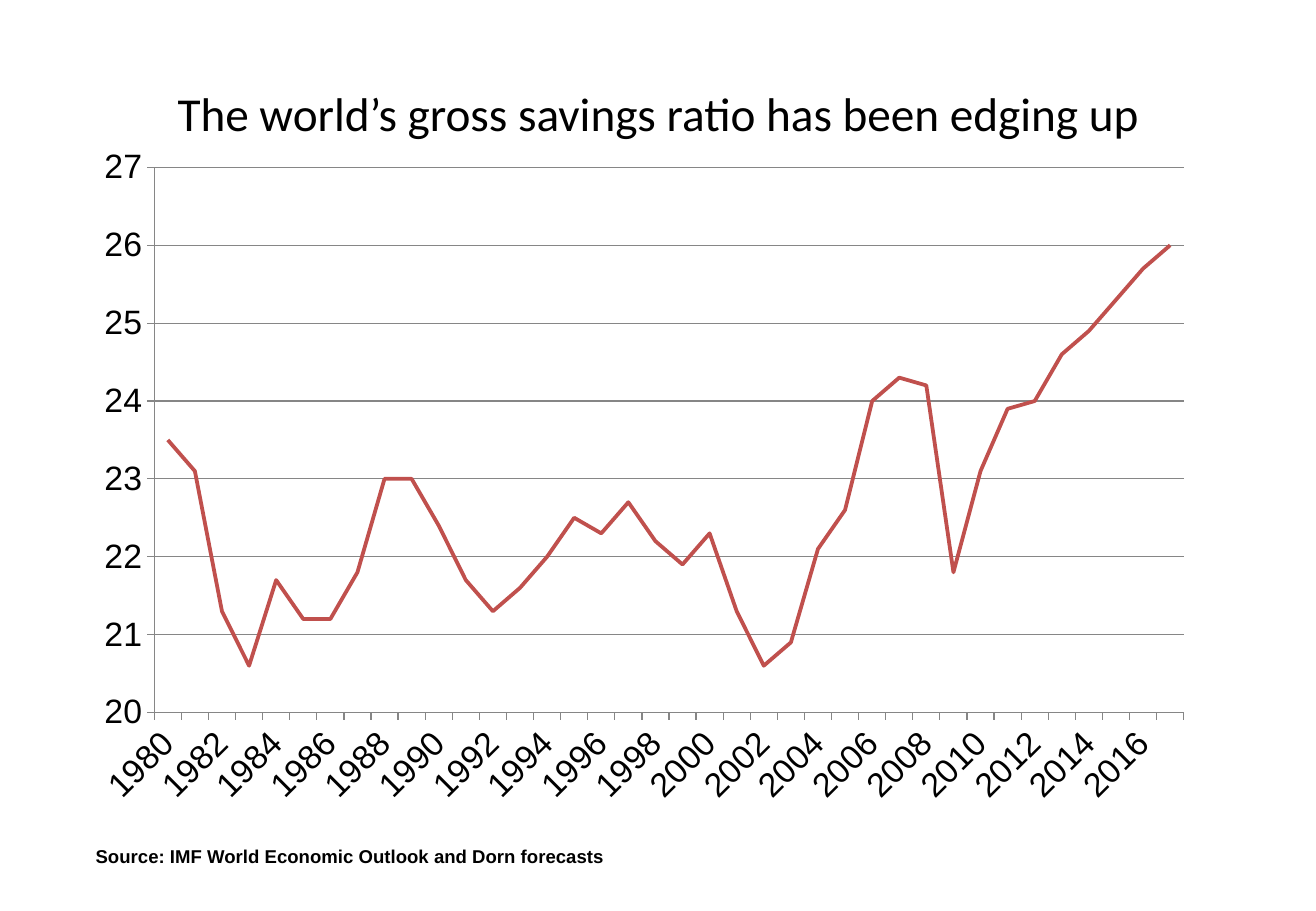
from pptx import Presentation
from pptx.chart.data import CategoryChartData as ChartData
from pptx.dml.color import RGBColor as Rgb
from pptx.enum.chart import XL_CHART_TYPE as Kind, XL_TICK_MARK as Tick
from pptx.enum.text import MSO_ANCHOR as Anchor, PP_ALIGN as Align
from pptx.oxml import parse_xml
from pptx.oxml.ns import nsdecls, qn
from pptx.util import Cm, Pt

HUES = {"text": "000000", "line": "C0504D", "grid": "868686"}
START = 1980
RATIOS = [
    23.5, 23.1, 21.3, 20.6, 21.7, 21.2, 21.2, 21.8, 23, 23,
    22.4, 21.7, 21.3, 21.6, 22, 22.5, 22.3, 22.7, 22.2, 21.9,
    22.3, 21.3, 20.6, 20.9, 22.1, 22.6, 24, 24.3, 24.2, 21.8,
    23.1, 23.9, 24, 24.6, 24.9, 25.3, 25.7, 26,
]
PLOT = {"x": 0.07, "y": 0.05, "w": 0.91, "h": 0.8}


def hue(name):
    return Rgb.from_string(HUES[name])


def write(shape, text, font="Arial", size=11, bold=False,
          align=Align.LEFT, anchor=Anchor.TOP, wrap=True):
    frame = shape.text_frame
    frame.word_wrap = wrap
    frame.vertical_anchor = anchor
    para = frame.paragraphs[0]
    para.alignment = align
    run = para.add_run()
    run.text = text
    run.font.name = font
    run.font.size = Pt(size)
    run.font.bold = bold
    run.font.color.rgb = hue("text")


def add_title(slide, text):
    title = slide.shapes.title
    title.left, title.top = Cm(1.37), Cm(0.76)
    title.width, title.height = Cm(24.77), Cm(3.18)
    write(title, text, font="Calibri", size=28,
          align=Align.CENTER, anchor=Anchor.MIDDLE)


def draw_line(line, name, width):
    line.color.rgb = hue(name)
    line.width = Pt(width)


def set_plot(chart):
    """Fix the inner plot area as shares of the chart."""
    area = chart._chartSpace.chart.plotArea
    for old in area.findall(qn("c:layout")):
        area.remove(old)
    sizes = "".join(f'<c:{key} val="{val}"/>' for key, val in PLOT.items())
    area.insert(0, parse_xml(
        f'<c:layout {nsdecls("c")}><c:manualLayout>'
        '<c:layoutTarget val="inner"/><c:xMode val="edge"/>'
        f'<c:yMode val="edge"/>{sizes}</c:manualLayout></c:layout>'))


def tilt_years(axis):
    """Label every second year, turned by 45 degrees."""
    node = axis._element
    node.find(qn("c:txPr")).find(qn("a:bodyPr")).set("rot", "-2700000")
    skip = parse_xml(f'<c:tickLblSkip {nsdecls("c")} val="2"/>')
    node.find(qn("c:noMultiLvlLbl")).addprevious(skip)


def add_graph(slide):
    data = ChartData()
    data.categories = [str(START + i) for i in range(len(RATIOS))]
    data.add_series("Series 1", RATIOS)
    chart = slide.shapes.add_chart(
        Kind.LINE, Cm(1.57), Cm(2.79), Cm(23.65), Cm(14.25), data).chart
    chart.has_legend = chart.has_title = False
    chart.font.name = "Arial"
    chart.font.size = Pt(20)
    chart.font.color.rgb = hue("text")

    years, scale = chart.category_axis, chart.value_axis
    for axis in (years, scale):
        axis.major_tick_mark = Tick.OUTSIDE
        axis.minor_tick_mark = Tick.NONE
        axis.tick_labels.font.size = Pt(20)
        draw_line(axis.format.line, "grid", 0.75)
    years.has_major_gridlines = False
    tilt_years(years)
    scale.minimum_scale, scale.maximum_scale = 20, 27
    scale.major_unit = 1
    scale.has_major_gridlines = True
    draw_line(scale.major_gridlines.format.line, "grid", 0.75)
    scale.tick_labels.number_format = "0"
    scale.tick_labels.number_format_is_linked = False

    plot = chart.plots[0]
    plot.vary_by_categories = False
    series = plot.series[0]
    series.smooth = False
    draw_line(series.format.line, "line", 2.25)
    set_plot(chart)


def add_source(slide, text):
    box = slide.shapes.add_textbox(Cm(1.75), Cm(17.55), Cm(11.2), Cm(0.74))
    write(box, text, bold=True, wrap=False)


def main():
    deck = Presentation()
    deck.slide_width, deck.slide_height = Cm(27.51), Cm(19.05)
    slide = deck.slides.add_slide(deck.slide_layouts[5])
    add_title(slide, "The world’s gross savings ratio has been edging up")
    add_graph(slide)
    add_source(slide, "Source: IMF World Economic Outlook and Dorn forecasts")
    deck.save("out.pptx")


if __name__ == "__main__":
    main()
